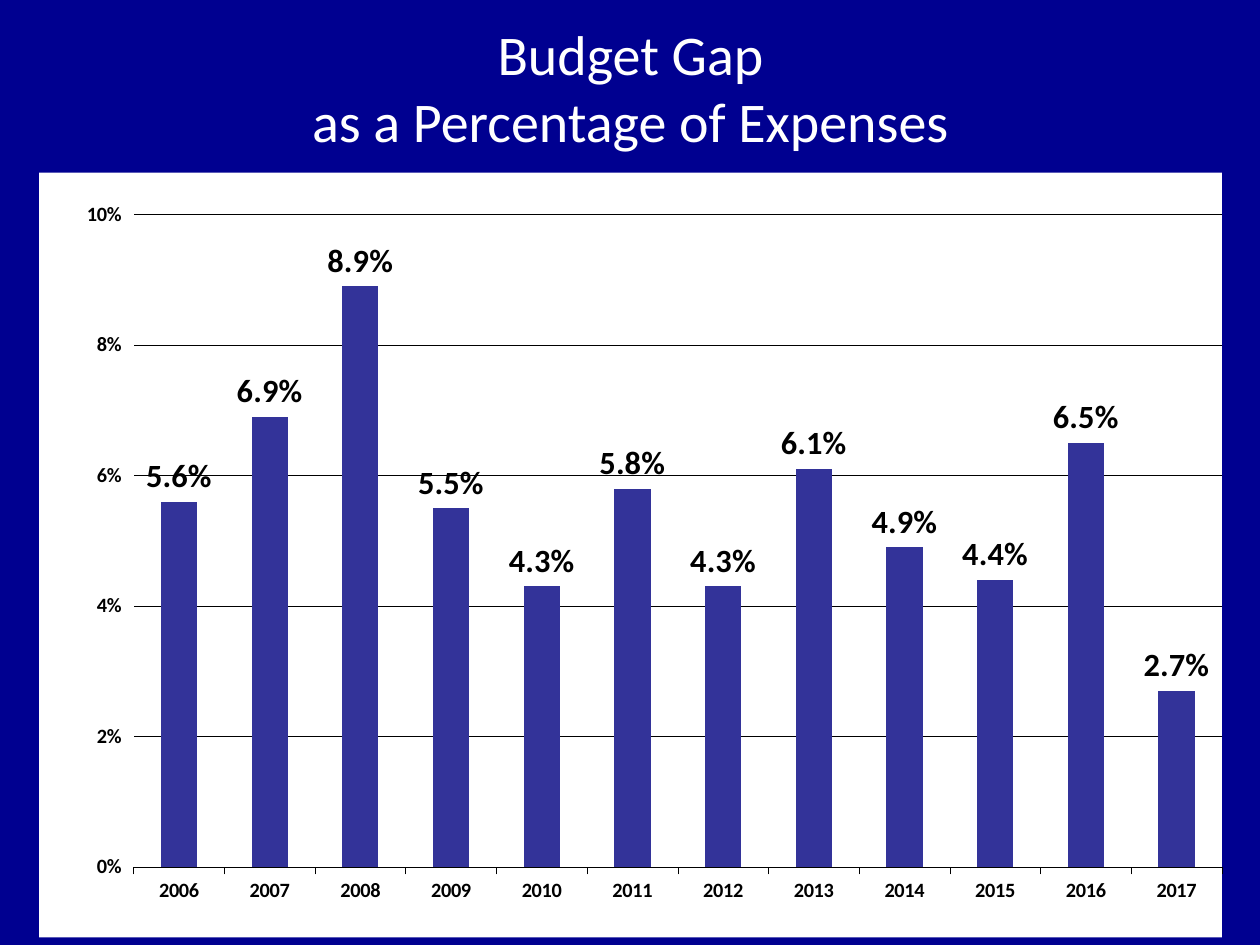
from dataclasses import dataclass

from pptx import Presentation
from pptx.chart.data import CategoryChartData
from pptx.dml.color import RGBColor
from pptx.enum.chart import XL_CHART_TYPE, XL_LABEL_POSITION, XL_TICK_MARK
from pptx.enum.text import MSO_ANCHOR, MSO_AUTO_SIZE, PP_ALIGN
from pptx.oxml import parse_xml
from pptx.oxml.ns import nsdecls
from pptx.util import Inches, Pt

HEADING = "Budget Gap\vas a Percentage of Expenses"
FIRST_YEAR = 2006
GAP_PERCENT = [5.6, 6.9, 8.9, 5.5, 4.3, 5.8, 4.3, 6.1, 4.9, 4.4, 6.5, 2.7]
HEADING_BOX = (0.98, 0.17, 8.05, 1.08)
CHART_BOX = (0.31, 1.37, 9.39, 6.07)
PLOT_SHARE = {"x": 0.08, "y": 0.055, "w": 0.92, "h": 0.853}


@dataclass(frozen=True)
class Theme:
    font: str = "Calibri"
    background: str = "000090"
    heading: str = "FFFFFF"
    panel: str = "FFFFFF"
    ink: str = "000000"
    bar: str = "333399"
    heading_size: float = 32
    label_size: float = 18.5
    axis_size: float = 11.6
    hairline: float = 0.28


THEME = Theme()


def style_font(font, size, color, bold):
    font.name = THEME.font
    font.size = Pt(size)
    font.bold = bold
    font.color.rgb = RGBColor.from_string(color)


def style_line(line):
    line.width = Pt(THEME.hairline)
    line.color.rgb = RGBColor.from_string(THEME.ink)


def add_heading(slide):
    heading = slide.shapes.title
    heading.left, heading.top, heading.width, heading.height = map(Inches, HEADING_BOX)
    frame = heading.text_frame
    frame.text = HEADING
    frame.word_wrap = True
    frame.auto_size = MSO_AUTO_SIZE.NONE
    frame.vertical_anchor = MSO_ANCHOR.BOTTOM
    frame.margin_left = frame.margin_right = Inches(0.03)
    frame.margin_top = frame.margin_bottom = Inches(0.03)
    lines = frame.paragraphs[0]
    lines.alignment = PP_ALIGN.CENTER
    for run in lines.runs:
        style_font(run.font, THEME.heading_size, THEME.heading, False)


def place_plot(chart):
    plot_area = chart._chartSpace.chart.plotArea
    for layout in plot_area.findall("{*}layout"):
        plot_area.remove(layout)
    modes = "".join(f'<c:{key}Mode val="edge"/>' for key in "xy")
    shares = "".join(f'<c:{key} val="{share}"/>' for key, share in PLOT_SHARE.items())
    plot_area.insert(0, parse_xml(
        f'<c:layout {nsdecls("c")}><c:manualLayout><c:layoutTarget val="inner"/>'
        f"{modes}{shares}</c:manualLayout></c:layout>"))


def fill_panel(chart):
    chart._chartSpace.chart.addnext(parse_xml(
        f'<c:spPr {nsdecls("c", "a")}><a:solidFill><a:srgbClr val="{THEME.panel}"/>'
        "</a:solidFill><a:ln><a:noFill/></a:ln></c:spPr>"))


def add_gap_chart(slide):
    gaps = CategoryChartData(number_format="0.0%")
    gaps.categories = [str(FIRST_YEAR + i) for i in range(len(GAP_PERCENT))]
    gaps.add_series("Series 1", [round(gap / 100, 3) for gap in GAP_PERCENT])
    chart = slide.shapes.add_chart(
        XL_CHART_TYPE.COLUMN_CLUSTERED, *map(Inches, CHART_BOX), gaps).chart
    chart.has_title = False
    chart.has_legend = False
    style_font(chart.font, THEME.label_size, THEME.ink, True)
    place_plot(chart)
    fill_panel(chart)

    years, percents = chart.category_axis, chart.value_axis
    for axis in (years, percents):
        axis.major_tick_mark = XL_TICK_MARK.OUTSIDE
        axis.minor_tick_mark = XL_TICK_MARK.NONE
        style_font(axis.tick_labels.font, THEME.axis_size, THEME.ink, True)
    style_line(years.format.line)
    percents.format.line.fill.background()
    percents.minimum_scale, percents.maximum_scale = 0, 0.1
    percents.major_unit = 0.02
    percents.tick_labels.number_format = "0%"
    percents.tick_labels.number_format_is_linked = False
    style_line(percents.major_gridlines.format.line)

    columns = chart.plots[0]
    columns.gap_width = 150
    columns.vary_by_categories = False
    bars = columns.series[0].format
    bars.fill.solid()
    bars.fill.fore_color.rgb = RGBColor.from_string(THEME.bar)
    bars.line.fill.background()
    columns.has_data_labels = True
    labels = columns.data_labels
    labels.show_value = True
    labels.position = XL_LABEL_POSITION.OUTSIDE_END
    labels.number_format = "0.0%"
    labels.number_format_is_linked = False
    style_font(labels.font, THEME.label_size, THEME.ink, True)


def main():
    deck = Presentation()
    deck.slide_width, deck.slide_height = Inches(10), Inches(7.5)
    slide = deck.slides.add_slide(deck.slide_layouts[5])
    slide.background.fill.solid()
    slide.background.fill.fore_color.rgb = RGBColor.from_string(THEME.background)
    add_heading(slide)
    add_gap_chart(slide)
    deck.save("out.pptx")


if __name__ == "__main__":
    main()
